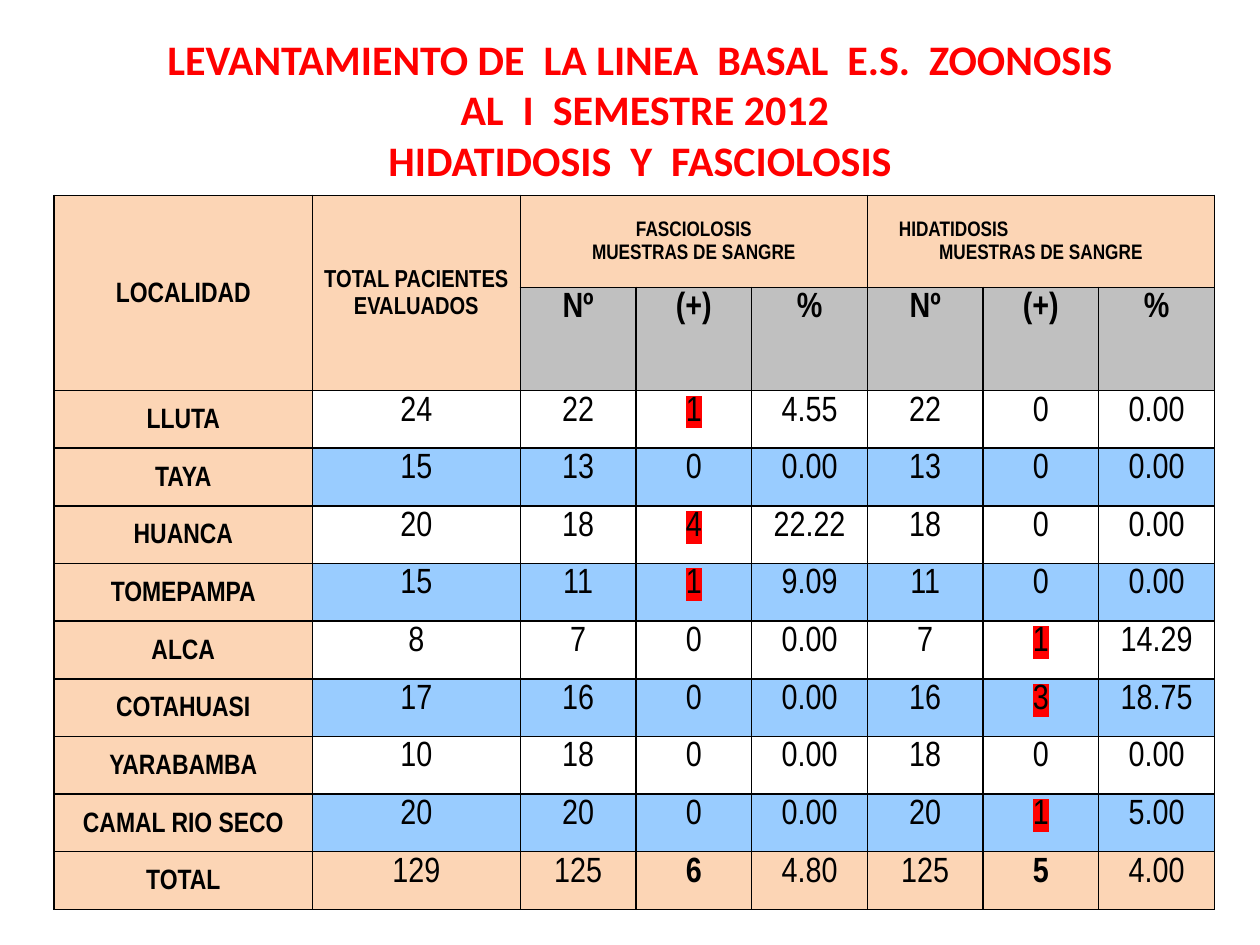
from lxml.etree import SubElement
from pptx import Presentation
from pptx.dml.color import RGBColor
from pptx.enum.text import MSO_ANCHOR, MSO_AUTO_SIZE, PP_ALIGN
from pptx.oxml.ns import qn
from pptx.util import Inches, Pt

COLORS = {
    "red": "FF0000",
    "black": "000000",
    "white": "FFFFFF",
    "peach": "FCD5B5",
    "gray": "C0C0C0",
    "blue": "99CCFF",
}
TITLE_LINES = [
    "LEVANTAMIENTO DE  LA LINEA  BASAL  E.S.  ZOONOSIS",
    " AL  I  SEMESTRE 2012\v HIDATIDOSIS  Y  FASCIOLOSIS ",
]
MEASURES = ["Nº", "(+)", "%"]
LOCALITIES = [
    ["LLUTA", "24", "22", "1", "4.55", "22", "0", "0.00"],
    ["TAYA", "15", "13", "0", "0.00", "13", "0", "0.00"],
    ["HUANCA", "20", "18", "4", "22.22", "18", "0", "0.00"],
    ["TOMEPAMPA", "15", "11", "1", "9.09", "11", "0", "0.00"],
    ["ALCA", "8", "7", "0", "0.00", "7", "1", "14.29"],
    ["COTAHUASI", "17", "16", "0", "0.00", "16", "3", "18.75"],
    ["YARABAMBA", "10", "18", "0", "0.00", "18", "0", "0.00"],
    ["CAMAL RIO SECO", "20", "20", "0", "0.00", "20", "1", "5.00"],
]
TOTALS = ["TOTAL", "129", "125", "6", "4.80", "125", "5", "4.00"]
POSITIVE_COLUMNS = (3, 6)


def format_paragraph(paragraph, font_name, size, color, bold):
    paragraph.alignment = PP_ALIGN.CENTER
    paragraph.font.name = font_name
    paragraph.font.size = Pt(size)
    paragraph.font.bold = bold
    paragraph.font.color.rgb = RGBColor.from_string(COLORS[color])


def fill_cell(cell, text, size, fill, bold=True, anchor=MSO_ANCHOR.MIDDLE):
    cell.text = text
    cell.vertical_anchor = anchor
    cell.margin_left = cell.margin_right = Inches(0.05)
    cell.margin_top = cell.margin_bottom = 0
    cell.fill.solid()
    cell.fill.fore_color.rgb = RGBColor.from_string(COLORS[fill])
    for paragraph in cell.text_frame.paragraphs:
        format_paragraph(paragraph, "Arial Narrow", size, "black", bold)
        paragraph.line_spacing = 1.15


presentation = Presentation()
presentation.slide_width, presentation.slide_height = Inches(10), Inches(7.5)
slide = presentation.slides.add_slide(presentation.slide_layouts[5])

title = slide.shapes.title
title.left, title.top = Inches(0.59), Inches(0.21)
title.width, title.height = Inches(8.98), Inches(1.31)
title.text_frame.text = "\n".join(TITLE_LINES)
title.text_frame.auto_size = MSO_AUTO_SIZE.NONE
title.text_frame.vertical_anchor = MSO_ANCHOR.MIDDLE
for paragraph in title.text_frame.paragraphs:
    format_paragraph(paragraph, "Calibri", 24, "red", True)
    paragraph.space_before = Pt(0)

# Two header rows, then equal rows; two label columns, then equal columns
table_width, table_height = 9.21, 5.67
body_rows = len(LOCALITIES) + 1
column_widths = [2.05, 1.65] + [(table_width - 3.7) / 6] * 6
row_heights = [0.73, 0.82] + [(table_height - 1.55) / body_rows] * body_rows
table = slide.shapes.add_table(
    len(row_heights), len(column_widths),
    Inches(0.43), Inches(1.55), Inches(table_width), Inches(table_height),
).table
table.first_row = table.horz_banding = False
for column, width in zip(table.columns, column_widths):
    column.width = Inches(width)
for row, height in zip(table.rows, row_heights):
    row.height = Inches(height)

# Borders come before the fill in the cell properties
for cell in table.iter_cells():
    properties = cell._tc.get_or_add_tcPr()
    for side in ("a:lnL", "a:lnR", "a:lnT", "a:lnB"):
        line = SubElement(properties, qn(side), w=str(Pt(1)))
        line_fill = SubElement(line, qn("a:solidFill"))
        SubElement(line_fill, qn("a:srgbClr"), val=COLORS["black"])

# Header
for column in (0, 1):
    table.cell(0, column).merge(table.cell(1, column))
for column in (2, 5):
    table.cell(0, column).merge(table.cell(0, column + 2))
fill_cell(table.cell(0, 0), "LOCALIDAD", 16, "peach")
fill_cell(table.cell(0, 1), "TOTAL PACIENTES EVALUADOS", 14, "peach")
for column, disease in ((2, "FASCIOLOSIS"), (5, "HIDATIDOSIS")):
    fill_cell(table.cell(0, column), f"{disease}\nMUESTRAS DE SANGRE", 12, "peach")
    for offset, measure in enumerate(MEASURES):
        fill_cell(table.cell(1, column + offset), measure, 20, "gray",
                  anchor=MSO_ANCHOR.TOP)
hidatidosis = table.cell(0, 5).text_frame.paragraphs[0]
hidatidosis.alignment = PP_ALIGN.LEFT
hidatidosis._p.get_or_add_pPr().set("marL", str(Inches(0.2)))

# Localities and totals
for index, values in enumerate(LOCALITIES + [TOTALS]):
    is_total = values is TOTALS
    row_fill = "peach" if is_total else ("white", "blue")[index % 2]
    fill_cell(table.cell(index + 2, 0), values[0], 16, "peach")
    for column, value in enumerate(values[1:], start=1):
        cell = table.cell(index + 2, column)
        is_positive = column in POSITIVE_COLUMNS
        fill_cell(cell, value, 20, row_fill, bold=is_total and is_positive,
                  anchor=MSO_ANCHOR.TOP)
        if is_positive and not is_total and value != "0":
            run = cell.text_frame.paragraphs[0].runs[0]
            highlight = SubElement(run._r.get_or_add_rPr(), qn("a:highlight"))
            SubElement(highlight, qn("a:srgbClr"), val=COLORS["red"])

presentation.save("out.pptx")
